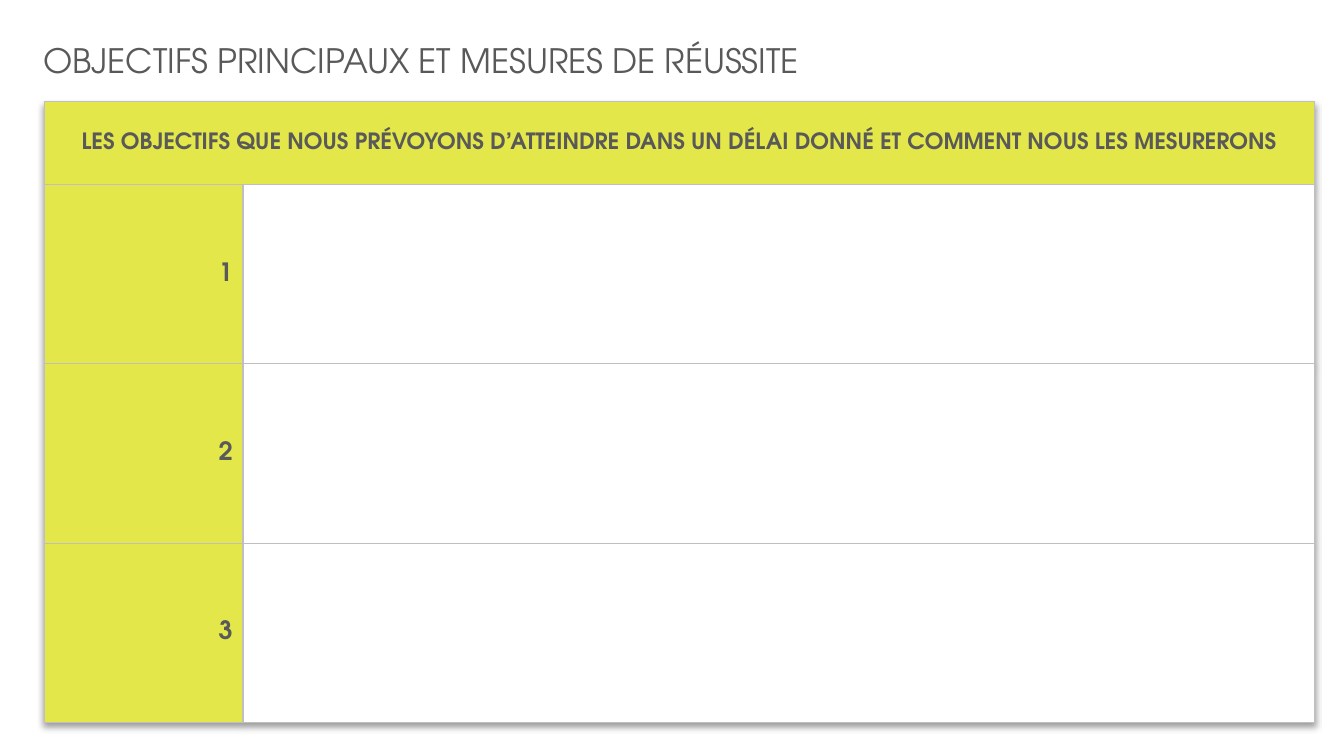
from dataclasses import dataclass

from lxml import etree
from pptx import Presentation
from pptx.dml.color import RGBColor
from pptx.enum import text
from pptx.oxml import ns
from pptx.util import Pt

FONT = "TeX Gyre Adventor"
COLORS = {"text": "595959", "accent": "E3E749", "blank": "FFFFFF",
          "border": "BFBFBF", "shadow": "000000"}
COL_WIDTHS = (141.84, 765.36)
HEADER_HEIGHT, GOAL_HEIGHT = 59.04, 128.16
GOAL_COUNT = 3


@dataclass(frozen=True)
class CellSpec:
    row: int
    col: int
    fill: str
    words: str = ""
    size: float = 18
    align: text.PP_ALIGN = text.PP_ALIGN.LEFT


def write(tf, words: str, size: float, align: text.PP_ALIGN, bold: bool) -> None:
    p = tf.paragraphs[0]
    p.alignment = align
    r = p.add_run()
    r.text = words
    for name, value in {"name": FONT, "size": Pt(size), "bold": bold}.items():
        setattr(r.font, name, value)
    r.font.color.rgb = RGBColor.from_string(COLORS["text"])


def add_color(parent, color: str):
    fill = etree.SubElement(parent, ns.qn("a:solidFill"))
    etree.SubElement(fill, ns.qn("a:srgbClr"), val=COLORS[color])


def draw_cell(table, item: CellSpec) -> None:
    cell = table.cell(item.row, item.col)
    cell.vertical_anchor = text.MSO_ANCHOR.MIDDLE
    tc_pr = cell._tc.get_or_add_tcPr()
    for side in "LRTB":
        add_color(etree.SubElement(tc_pr, ns.qn(f"a:ln{side}"), w=str(Pt(1))), "border")
    cell.fill.solid()
    cell.fill.fore_color.rgb = RGBColor.from_string(COLORS[item.fill])
    if item.words:
        write(cell.text_frame, item.words, item.size, item.align, True)


def add_table_shadow(table) -> None:
    effects = etree.Element(ns.qn("a:effectLst"))
    shadow = etree.SubElement(effects, ns.qn("a:outerShdw"), blurRad=str(Pt(4)),
                              dist=str(Pt(3)), dir="5400000", algn="t", rotWithShape="0")
    color = etree.SubElement(shadow, ns.qn("a:srgbClr"), val=COLORS["shadow"])
    etree.SubElement(color, ns.qn("a:alpha"), val="40000")
    table._tbl.tblPr.insert(0, effects)


def add_title(slide) -> None:
    sp = slide.shapes.add_textbox(Pt(23.76), Pt(25.2), Pt(581.76), Pt(36))
    tf = sp.text_frame
    for name, value in {"word_wrap": True,
                        "auto_size": text.MSO_AUTO_SIZE.SHAPE_TO_FIT_TEXT}.items():
        setattr(tf, name, value)
    write(tf, "OBJECTIFS PRINCIPAUX ET MESURES DE RÉUSSITE", 24, text.PP_ALIGN.LEFT, False)


def add_goals_table(slide) -> None:
    row_heights = [HEADER_HEIGHT] + [GOAL_HEIGHT] * GOAL_COUNT
    table = slide.shapes.add_table(
        len(row_heights), len(COL_WIDTHS), Pt(31.68), Pt(72.72),
        Pt(sum(COL_WIDTHS)), Pt(sum(row_heights))).table
    for column, width in zip(table.columns, COL_WIDTHS):
        column.width = Pt(width)
    for row, height in zip(table.rows, row_heights):
        row.height = Pt(height)
    for name in ("first_row", "horz_banding"):
        setattr(table, name, False)
    table.cell(0, 0).merge(table.cell(0, 1))

    cells = [
        CellSpec(0, 0, "accent",
                 "LES OBJECTIFS QUE NOUS PRÉVOYONS D’ATTEINDRE DANS UN DÉLAI DONNÉ "
                 "ET COMMENT NOUS LES MESURERONS", 16, text.PP_ALIGN.CENTER),
        CellSpec(0, 1, "accent"),
    ]
    for goal in range(1, GOAL_COUNT + 1):
        cells.append(CellSpec(goal, 0, "accent", str(goal), align=text.PP_ALIGN.RIGHT))
        cells.append(CellSpec(goal, 1, "blank"))
    for item in cells:
        draw_cell(table, item)
    add_table_shadow(table)


def main() -> None:
    prs = Presentation()
    prs.slide_width, prs.slide_height = Pt(960), Pt(540)
    slide = prs.slides.add_slide(prs.slide_layouts[6])
    add_title(slide)
    add_goals_table(slide)
    prs.save("out.pptx")


if __name__ == "__main__":
    main()
